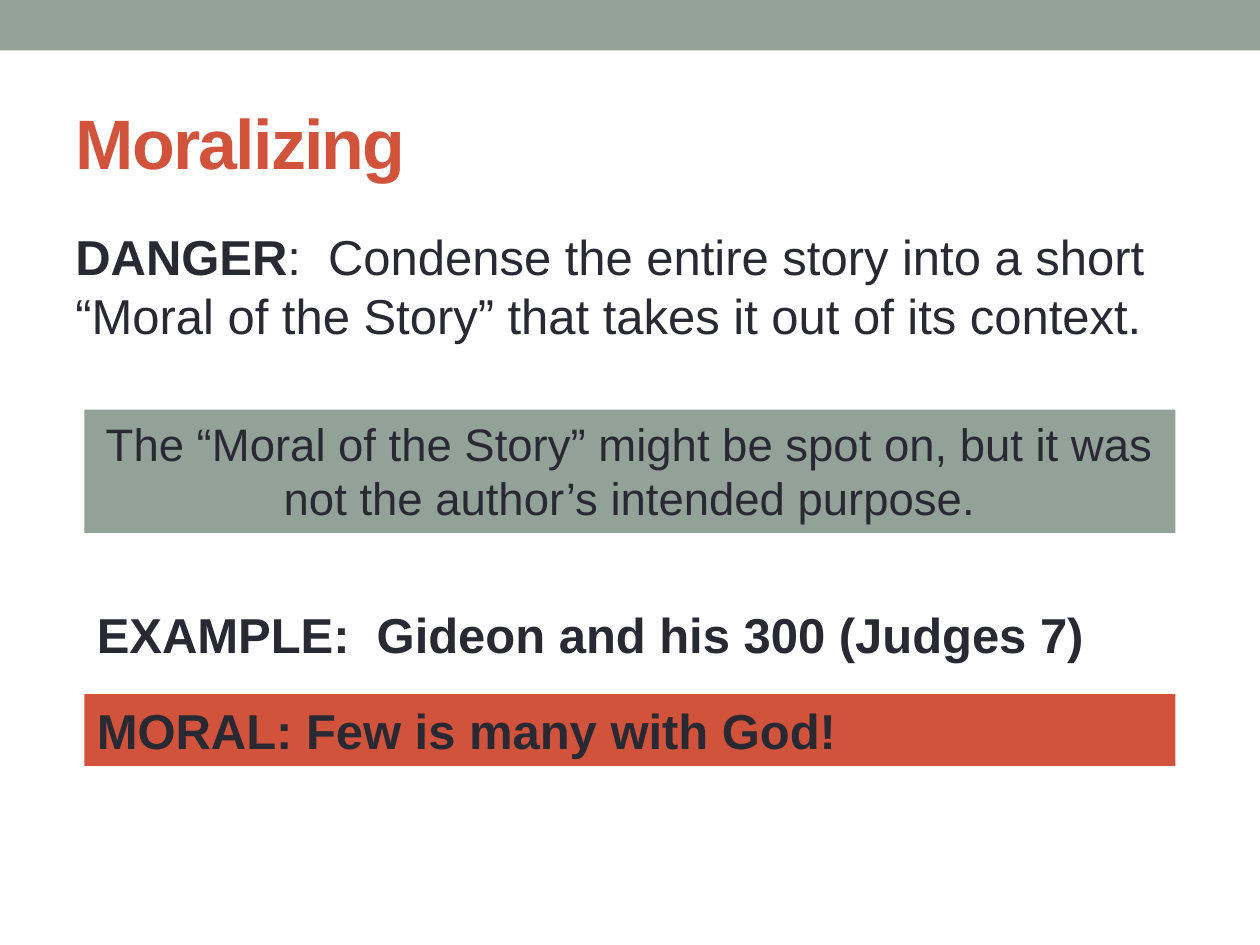
from pptx import Presentation
from pptx import util as u
from pptx.dml.color import RGBColor
from pptx.enum import shapes, text

SAGE = RGBColor(0x93, 0xA2, 0x99)
RUST = RGBColor(0xD2, 0x53, 0x3C)
INK = RGBColor(0x29, 0x29, 0x34)
FONT = "Arial"
TITLE_ONLY = 5


def inches(box):
    """Convert a left, top, width, height box to lengths."""
    return [u.Inches(value) for value in box]


def style(paragraph, size, color=INK, bold=False, align=text.PP_ALIGN.LEFT):
    """Format a whole paragraph."""
    paragraph.alignment = align
    paragraph.font.name = FONT
    paragraph.font.size = u.Pt(size)
    paragraph.font.bold = bold
    paragraph.font.color.rgb = color


def add_band(slide, box, fill):
    """Add a plain rectangle and return it."""
    shape = slide.shapes.add_shape(shapes.MSO_SHAPE.RECTANGLE, *inches(box))
    shape.shadow.inherit = False
    shape.fill.solid()
    shape.fill.fore_color.rgb = fill
    shape.line.fill.background()
    return shape


def add_title(slide, box, wording):
    """Place the title placeholder in the box."""
    title = slide.shapes.title
    title.left, title.top, title.width, title.height = inches(box)
    frame = title.text_frame
    frame.text = wording
    frame.vertical_anchor = text.MSO_ANCHOR.MIDDLE
    paragraph = frame.paragraphs[0]
    style(paragraph, 40, RUST, bold=True)
    paragraph.runs[0].font._element.set("spc", "-100")


def add_body(slide, box, lead, wording):
    """Add the main statement with a bold lead word."""
    frame = slide.shapes.add_textbox(*inches(box)).text_frame
    frame.word_wrap = True
    paragraph = frame.paragraphs[0]
    style(paragraph, 28)
    paragraph.space_before = u.Pt(5.6)
    run = paragraph.add_run()
    run.text = lead
    run.font.bold = True
    paragraph.add_run().text = wording


def add_callout(slide, box, wording, size, fill=None, **format_options):
    """Add one line of argument, on a filled band if a fill is given."""
    if fill is None:
        shape = slide.shapes.add_textbox(*inches(box))
    else:
        shape = add_band(slide, box, fill)
    frame = shape.text_frame
    frame.word_wrap = True
    frame.auto_size = text.MSO_AUTO_SIZE.SHAPE_TO_FIT_TEXT
    frame.vertical_anchor = text.MSO_ANCHOR.TOP
    frame.text = wording
    style(frame.paragraphs[0], size, **format_options)


def main():
    """Build the slide and save it."""
    presentation = Presentation()
    presentation.slide_width, presentation.slide_height = u.Inches(10), u.Inches(7.5)
    slide = presentation.slides.add_slide(presentation.slide_layouts[TITLE_ONLY])
    margin, indent = 0.5, 0.67
    width, inner_width = 10 - 2 * margin, 10 - 2 * indent

    add_band(slide, (0, 0, 10, 0.4), SAGE)
    add_title(slide, (margin, 0.58, width, 1.08), "Moralizing")
    add_body(slide, (margin, 1.75, width, 1.25), "DANGER",
             ":  Condense the entire story into a short “Moral of the Story” "
             "that takes it out of its context.")
    add_callout(slide, (indent, 3.25, inner_width, 0.98),
                "The “Moral of the Story” might be spot on, but it was not "
                "the author’s intended purpose.",
                26, SAGE, align=text.PP_ALIGN.CENTER)
    add_callout(slide, (indent, 4.75, inner_width, 0.57),
                "EXAMPLE:  Gideon and his 300 (Judges 7)", 28, bold=True)
    add_callout(slide, (indent, 5.51, inner_width, 0.57),
                "MORAL: Few is many with God!", 28, RUST, bold=True)
    presentation.save("out.pptx")


if __name__ == "__main__":
    main()
